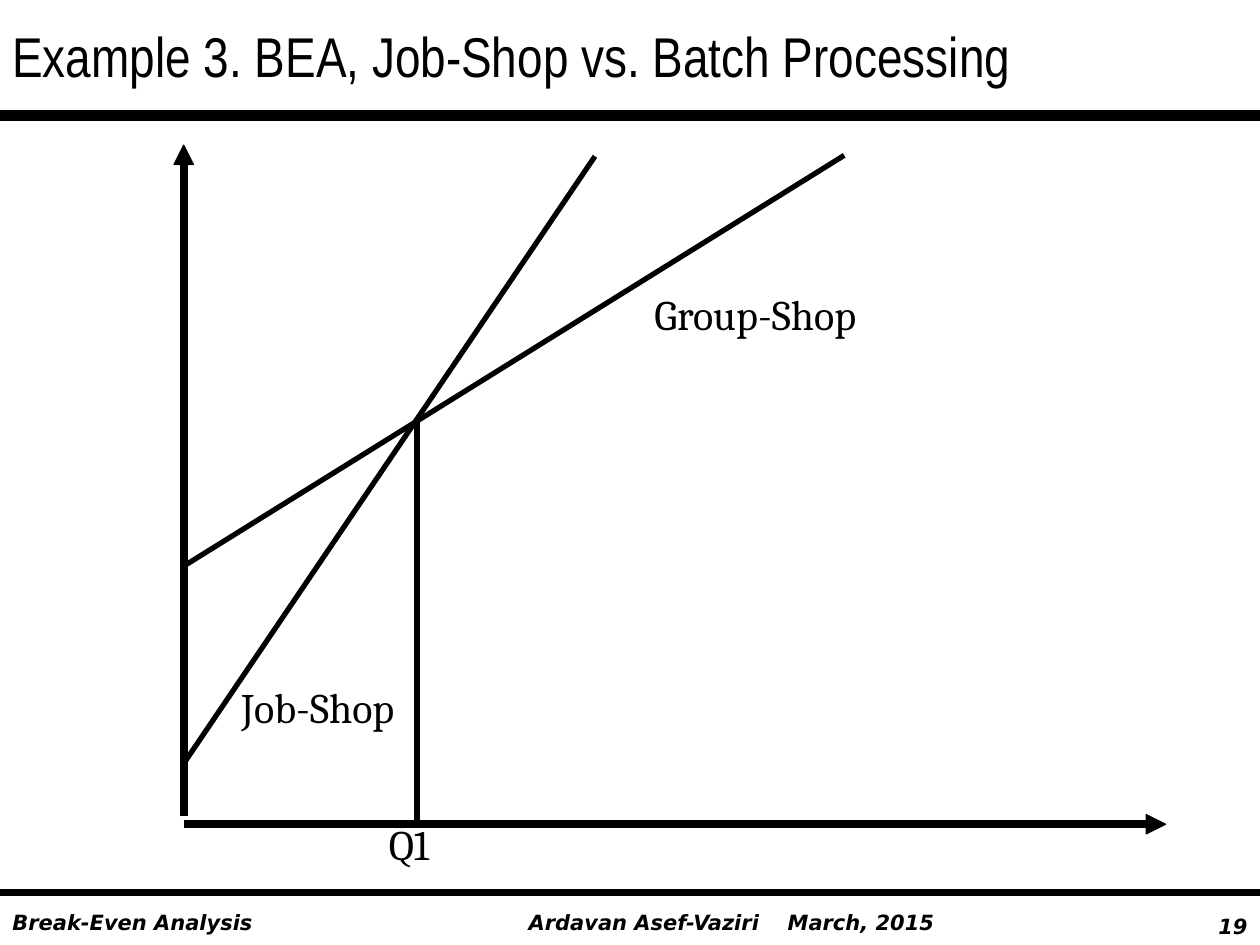
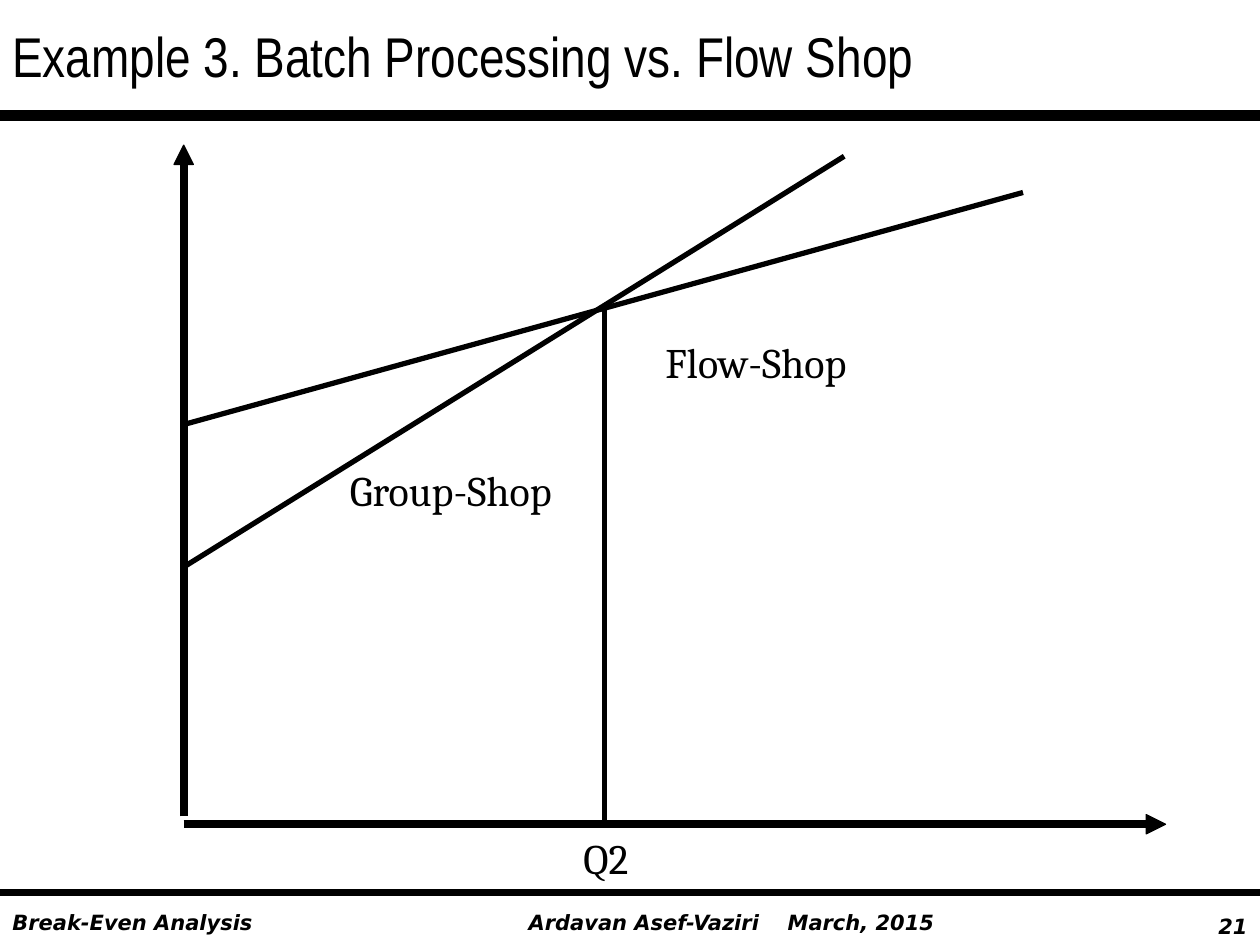
from dataclasses import dataclass

from lxml import etree
from pptx import Presentation
from pptx.dml.color import RGBColor
from pptx.enum.shapes import MSO_CONNECTOR
from pptx.enum.text import PP_ALIGN
from pptx.oxml.ns import qn
from pptx.util import Pt

STRAIGHT = MSO_CONNECTOR.STRAIGHT
LEFT, RIGHT = PP_ALIGN.LEFT, PP_ALIGN.RIGHT


@dataclass(frozen=True)
class Theme:
    ink: RGBColor = RGBColor(0, 0, 0)
    title: tuple = ("Arial Narrow", 32, False)
    label: tuple = ("Cambria", 24, False)
    foot: tuple = ("DejaVu Sans", 12, True)
    band: float = 6
    axis: float = 4.5
    curve: float = 3
    edge: float = 0.75


theme = Theme()
WIDE, HIGH = 720, 540
AXIS_X, AXIS_Y = 105, 471
TOP, END = 83, 666
TIP, HALF = 11, 5.5

plots = [
    {
        "title": "Example 3. BEA, Job-Shop vs. Batch Processing",
        "page": "19",
        "curves": [(436.3, 340, 89.3), (323.5, 482.4, 88.8)],
        "cross": (238.3, 239),
        "labels": [
            ("Job-Shop", 138, 389.5, 97),
            ("Group-Shop", 374, 165, 133),
            ("Q1", 222.2, 468, 31),
        ],
    },
    {
        "title": "Example 3. Batch Processing vs. Flow Shop",
        "page": "21",
        "curves": [(324, 482.4, 89.3), (242.6, 584.6, 110)],
        "cross": (345.6, 176.4),
        "labels": [
            ("Group-Shop", 200, 265.7, 133),
            ("Flow-Shop", 380.2, 192.2, 117),
            ("Q2", 333.4, 476, 31),
        ],
    },
]


def add_text(slide, text, x, y, w, h, style, align=LEFT, tight=False):
    box = slide.shapes.add_textbox(Pt(x), Pt(y), Pt(w), Pt(h))
    frame = box.text_frame
    frame.word_wrap = not tight
    if tight:
        frame.margin_left = frame.margin_right = 0
        frame.margin_top = frame.margin_bottom = 0
    frame.text = text
    para = frame.paragraphs[0]
    para.alignment = align
    name, size, strong = style
    for run in para.runs:
        run.font.name = name
        run.font.size = Pt(size)
        run.font.bold = run.font.italic = strong
        run.font.color.rgb = theme.ink
    return para


def add_line(slide, x1, y1, x2, y2, width):
    line = slide.shapes.add_connector(STRAIGHT, Pt(x1), Pt(y1), Pt(x2), Pt(y2))
    line.line.color.rgb = theme.ink
    line.line.width = Pt(width)
    etree.SubElement(line._element.spPr, qn("a:effectLst"))


deck = Presentation()
deck.slide_width, deck.slide_height = Pt(WIDE), Pt(HIGH)
blank = deck.slide_layouts[6]

for plot in plots:
    slide = deck.slides.add_slide(blank)

    add_text(slide, plot["page"], 666, 518.4, 54, 21.6, theme.foot, RIGHT)
    credit = add_text(slide, "Ardavan Asef-Vaziri\tMarch, 2015",
                      295, 516, 287, 21.6, theme.foot)
    tabs = etree.SubElement(credit._p.get_or_add_pPr(), qn("a:tabLst"))
    etree.SubElement(tabs, qn("a:tab"), pos=str(Pt(148)), algn="l")
    add_text(slide, "Break-Even Analysis", 0, 516, 280, 21.6, theme.foot)
    add_line(slide, 0, 66, WIDE, 66, theme.band)
    add_line(slide, 0, 510, WIDE, 510, theme.axis)
    add_text(slide, plot["title"], 0, 8.6, WIDE, 45.4, theme.title)

    add_line(slide, AXIS_X, AXIS_Y - 4.5, AXIS_X, TOP + TIP, theme.axis)
    add_line(slide, AXIS_X, AXIS_Y, END - TIP, AXIS_Y, theme.axis)
    heads = [
        [(AXIS_X + HALF, TOP + TIP), (AXIS_X, TOP), (AXIS_X - HALF, TOP + TIP)],
        [(END - TIP, AXIS_Y + HALF), (END, AXIS_Y), (END - TIP, AXIS_Y - HALF)],
    ]
    for head in heads:
        spots = [(Pt(x), Pt(y)) for x, y in head]
        path = slide.shapes.build_freeform(*spots[0])
        path.add_line_segments(spots[1:], close=True)
        arrow = path.convert_to_shape()
        arrow.shadow.inherit = False
        arrow.fill.solid()
        arrow.fill.fore_color.rgb = theme.ink
        arrow.line.color.rgb = theme.ink
        arrow.line.width = Pt(theme.edge)

    for start, x, y in plot["curves"]:
        add_line(slide, AXIS_X, start, x, y, theme.curve)
    x, y = plot["cross"]
    add_line(slide, x, y, x, AXIS_Y, theme.curve)

    for text, x, y, w in plot["labels"]:
        add_text(slide, text, x, y, w, 28.8, theme.label, tight=True)

deck.save("out.pptx")
